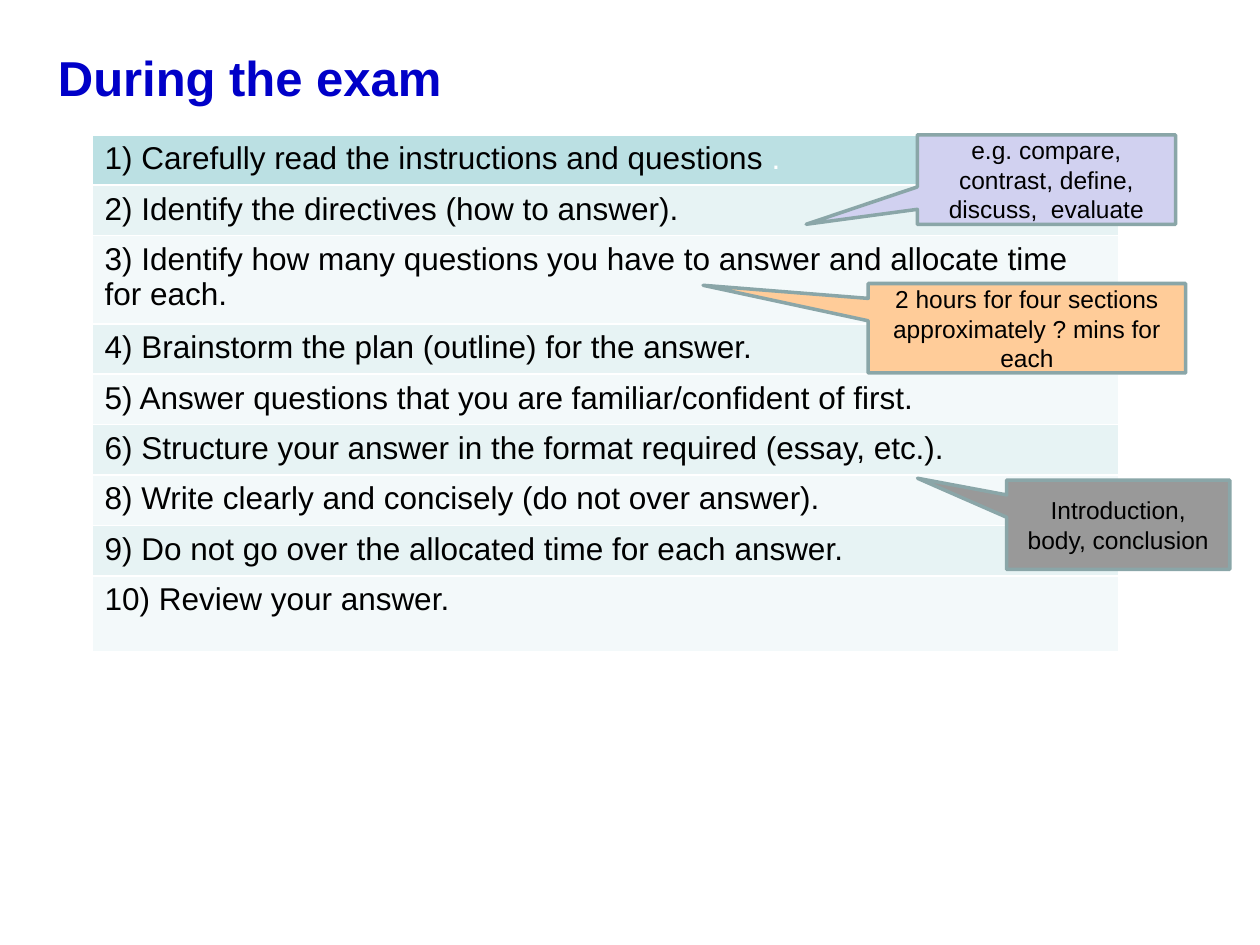
import pptx
import pptx.util
import pptx.dml.color
import pptx.enum.shapes
import pptx.enum.text

COLORS = {
    "title": "0000C8", "text": "000000", "white": "FFFFFF",
    "header": "BBE0E3", "band_dark": "E7F3F4", "band_light": "F3F9FA",
    "outline": "8AA6A8", "lilac": "D1D1F0", "peach": "FFCC99", "grey": "999999",
}


def color(name):
    return pptx.dml.color.RGBColor.from_string(COLORS[name])


def style(para, size, name):
    para.font.name = "Arial"
    para.font.size = pptx.util.Pt(size)
    para.font.color.rgb = color(name)
    para.font.bold = False


deck = pptx.Presentation()
deck.slide_width = pptx.util.Inches(10)
deck.slide_height = pptx.util.Inches(7.5)
column = deck.slide_width / 100
row = deck.slide_height / 75
page = deck.slides.add_slide(deck.slide_layouts[5])

title = page.shapes.title
title.left, title.top = int(3.6 * column), int(2.9 * row)
title.width, title.height = int(94.1 * column), int(7.3 * row)
frame = title.text_frame
frame.auto_size = pptx.enum.text.MSO_AUTO_SIZE.NONE
frame.vertical_anchor = pptx.enum.text.MSO_ANCHOR.TOP
frame.margin_top = int(0.9 * row)
frame.text = "During the exam"
para = frame.paragraphs[0]
para.alignment = pptx.enum.text.PP_ALIGN.LEFT
style(para, 28, "title")
para.font.bold = True

steps = [
    "1) Carefully read the instructions and questions ",
    "2) Identify the directives (how to answer).",
    "3) Identify how many questions you have to answer and allocate time for each.",
    "4) Brainstorm the plan (outline) for the answer.",
    "5) Answer questions that you are familiar/confident of first.",
    "6) Structure your answer in the format required (essay, etc.).",
    "8) Write clearly and concisely (do not over answer).",
    "9) Do not go over the allocated time for each answer.",
    "10) Review your answer.",
]
tall_rows = {2: 7, 8: 6}
heights = [tall_rows.get(index, 4) for index in range(len(steps))]
table = page.shapes.add_table(
    len(steps), 1, int(7.3 * column), int(10.7 * row),
    int(81.5 * column), int(sum(heights) * row)).table
for index, step in enumerate(steps):
    table.rows[index].height = int(heights[index] * row)
    cell = table.cell(index, 0)
    band = "band_dark" if index % 2 else "band_light"
    cell.fill.solid()
    cell.fill.fore_color.rgb = color("header" if index == 0 else band)
    cell.text = step
    style(cell.text_frame.paragraphs[0], 18, "text")

span = table.cell(0, 0).text_frame.paragraphs[0].add_run()
span.text = "."
span.font.color.rgb = color("white")

callouts = [
    ("e.g. compare, contrast, define, discuss,  evaluate",
     72.8, 10.7, 20.5, (-0.93, 0.5), "lilac"),
    ("2 hours for four sections approximately ? mins for each",
     68.9, 22.5, 25.2, (-1.02, -0.48), "peach"),
    ("Introduction, body, conclusion",
     79.9, 38.1, 17.7, (-0.9, -0.52), "grey"),
]
for words, left, top, width, tip, fill in callouts:
    box = page.shapes.add_shape(
        pptx.enum.shapes.MSO_SHAPE.RECTANGULAR_CALLOUT,
        int(left * column), int(top * row), int(width * column), int(7.1 * row))
    box.adjustments[0], box.adjustments[1] = tip
    box.shadow.inherit = False
    box.fill.solid()
    box.fill.fore_color.rgb = color(fill)
    box.line.color.rgb = color("outline")
    box.line.width = pptx.util.Pt(2)
    frame = box.text_frame
    frame.word_wrap = True
    frame.vertical_anchor = pptx.enum.text.MSO_ANCHOR.MIDDLE
    frame.text = words
    para = frame.paragraphs[0]
    para.alignment = pptx.enum.text.PP_ALIGN.CENTER
    style(para, 14, "text")

deck.save("out.pptx")
